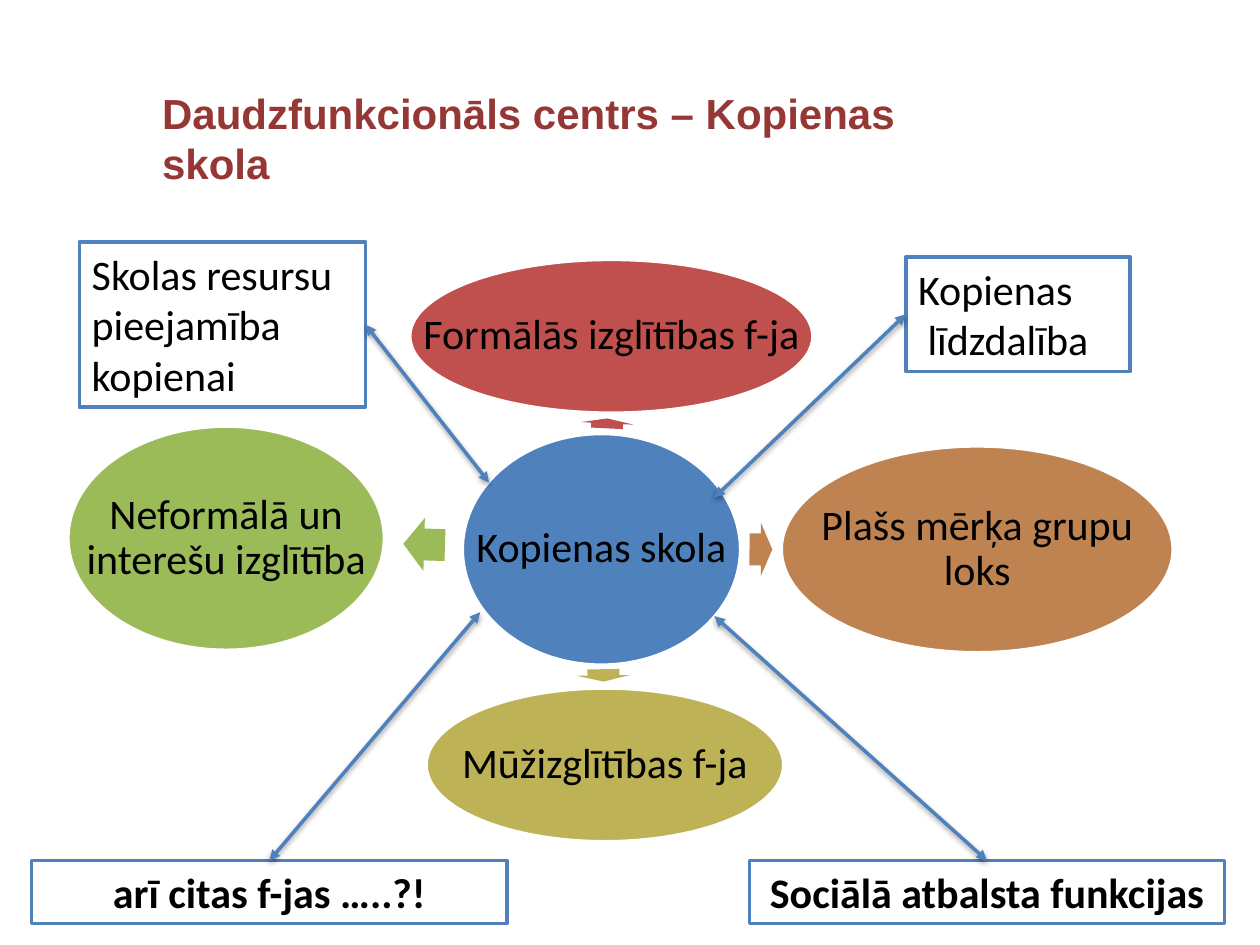
"""Build a slide showing the functions that surround a community school."""
from dataclasses import dataclass

from lxml import etree
from pptx import Presentation
from pptx import util as u
from pptx.dml.color import RGBColor
from pptx.enum import shapes, text
from pptx.oxml import ns


@dataclass(frozen=True)
class Theme:
    """Colours, fonts and sizes of the slide."""
    title: str = "953735"
    ink: str = "000000"
    paper: str = "FFFFFF"
    blue: str = "4F81BD"
    red: str = "C0504D"
    brown: str = "BE8351"
    olive: str = "BDB255"
    green: str = "9BBB59"
    heading_font: str = "Arial"
    body_font: str = "Calibri"
    size: int = 24
    line: int = 2


THEME = Theme()


def colour(code):
    """Turn a hex code into a colour."""
    return RGBColor.from_string(code)


def lengths(values):
    """Turn centimetre figures into lengths."""
    return [u.Cm(value) for value in values]


def write(frame, lines, font=THEME.body_font, ink=THEME.ink, bold=False, align=text.PP_ALIGN.LEFT):
    """Fill a text frame with one paragraph for each line."""
    frame.word_wrap = True
    for index, line in enumerate(lines):
        para = frame.paragraphs[0] if index == 0 else frame.add_paragraph()
        para.text = line
        para.alignment = align
        para.font.name = font
        para.font.size = u.Pt(THEME.size)
        para.font.bold = bold
        para.font.color.rgb = colour(ink)


def add_solid(page, kind, box, fill, line=None):
    """Add a flat preset shape, outlined when a line colour is given."""
    shape = page.shapes.add_shape(kind, *lengths(box))
    shape.shadow.inherit = False
    shape.fill.solid()
    shape.fill.fore_color.rgb = colour(fill)
    if line:
        shape.line.color.rgb = colour(line)
        shape.line.width = u.Pt(THEME.line)
    else:
        shape.line.fill.background()
    return shape


def add_title(page, box, title):
    """Add the slide heading."""
    frame = page.shapes.add_textbox(*lengths(box)).text_frame
    write(frame, [title], THEME.heading_font, THEME.title, True)


def add_oval(page, box, fill, label):
    """Add an ellipse whose label may use its full width."""
    add_solid(page, shapes.MSO_SHAPE.OVAL, box, fill, THEME.paper)
    frame = page.shapes.add_textbox(*lengths(box)).text_frame
    frame.margin_left = frame.margin_right = u.Cm(0.08)
    frame.margin_top = frame.margin_bottom = u.Cm(0.08)
    frame.vertical_anchor = text.MSO_ANCHOR.MIDDLE
    write(frame, [label], align=text.PP_ALIGN.CENTER)
    frame.paragraphs[0].line_spacing = 0.9


def add_pointer(page, box, fill, turn):
    """Add a block arrow leading from the centre to a function."""
    arrow = add_solid(page, shapes.MSO_SHAPE.RIGHT_ARROW, box, fill)
    arrow.adjustments[0] = 0.6
    arrow.adjustments[1] = 0.5
    arrow.rotation = turn


def add_note(page, box, lines, bold=False, align=text.PP_ALIGN.LEFT):
    """Add an outlined text box and return it."""
    note = add_solid(page, shapes.MSO_SHAPE.RECTANGLE, box, THEME.paper, THEME.blue)
    note.text_frame.vertical_anchor = text.MSO_ANCHOR.TOP
    write(note.text_frame, lines, bold=bold, align=align)
    return note


def add_link(page, note, side, end):
    """Join the side of a note to a point by a shadowed two-headed arrow."""
    x, y = lengths(end)
    link = page.shapes.add_connector(shapes.MSO_CONNECTOR.STRAIGHT, x, y, x, y)
    link.begin_connect(note, side)
    link.line.color.rgb = colour(THEME.blue)
    link.line.width = u.Pt(THEME.line)
    outline = link.line._get_or_add_ln()
    for tag in ("a:headEnd", "a:tailEnd"):
        etree.SubElement(outline, ns.qn(tag), type="triangle")
    effects = etree.SubElement(link._element.spPr, ns.qn("a:effectLst"))
    shadow = etree.SubElement(effects, ns.qn("a:outerShdw"), blurRad="40000",
                              dist="20000", dir="5400000", rotWithShape="0")
    shade = etree.SubElement(shadow, ns.qn("a:srgbClr"), val=THEME.ink)
    etree.SubElement(shade, ns.qn("a:alpha"), val="38000")


def add_wheel(page):
    """Add the school in the centre and its four functions."""
    add_oval(page, (9.32, 8.74, 5.61, 4.67), THEME.blue, "Kopienas skola")
    functions = [
        ("Formālās izglītības f-ja", THEME.red,
         (8.26, 5.23, 8.13, 3.1), (12.14, 8, 0.2, 1.07), 272.8),
        ("Plašs mērķa grupu loks", THEME.brown,
         (15.75, 8.99, 7.9, 4.17), (15.11, 10.54, 0.46, 1.07), 0.1),
        ("Mūžizglītības f-ja", THEME.olive,
         (8.59, 13.87, 7.21, 3.1), (12.04, 13.08, 0.25, 1.07), 89.1),
        ("Neformālā un interešu izglītība", THEME.green,
         (1.37, 8.59, 6.38, 4.52), (8.13, 10.44, 0.84, 1.07), 181.6),
    ]
    for label, fill, oval, arrow, turn in functions:
        add_pointer(page, arrow, fill, turn)
        add_oval(page, oval, fill, label)


def add_notes(page):
    """Add the four corner notes and link them to the school."""
    resources = add_note(page, (1.6, 4.88, 5.77, 3.33), ["Skolas resursu", "pieejamība kopienai"])
    sharing = add_note(page, (18.26, 5.18, 4.52, 2.31), ["Kopienas", "līdzdalība"])
    indent = sharing.text_frame.paragraphs[1]._p.get_or_add_pPr()
    indent.set("marL", str(u.Cm(0.19)))
    support = add_note(page, (15.11, 17.35, 9.58, 1.27), ["Sociālā atbalsta funkcijas"],
                       True, text.PP_ALIGN.CENTER)
    others = add_note(page, (0.64, 17.35, 9.58, 1.27), ["arī citas f-jas …..?!"],
                      True, text.PP_ALIGN.CENTER)
    add_link(page, resources, 3, (9.86, 9.73))
    add_link(page, sharing, 1, (14.4, 10.03))
    add_link(page, support, 0, (14.4, 12.42))
    add_link(page, others, 0, (9.68, 12.34))


def main():
    """Build and save the deck."""
    deck = Presentation()
    deck.slide_width, deck.slide_height = lengths((25.4, 19.05))
    page = deck.slides.add_slide(deck.slide_layouts[6])
    add_title(page, (3.02, 1.63, 17.22, 2.31), "Daudzfunkcionāls centrs – Kopienas skola")
    add_wheel(page)
    add_notes(page)
    deck.save("out.pptx")


if __name__ == "__main__":
    main()
